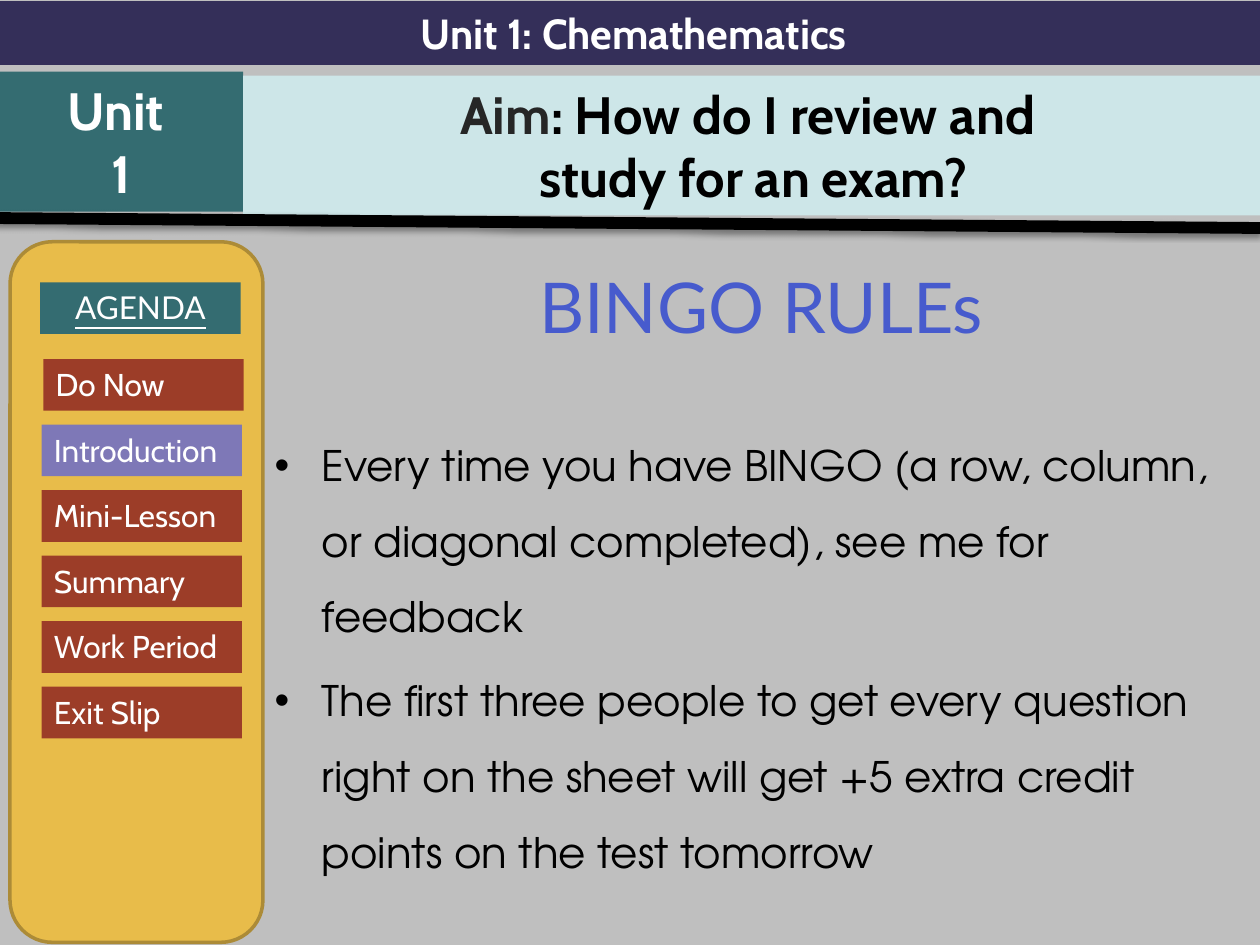
"""Build the bingo rules slide with its unit banners and agenda sidebar."""
from typing import NamedTuple

from lxml import etree
from pptx import Presentation
from pptx.dml.color import RGBColor
from pptx.enum.shapes import MSO_CONNECTOR, MSO_SHAPE
from pptx.enum.text import MSO_ANCHOR, PP_ALIGN
from pptx.oxml.ns import qn
from pptx.util import Pt

RECTANGLE, ROUNDED = MSO_SHAPE.RECTANGLE, MSO_SHAPE.ROUNDED_RECTANGLE
STRAIGHT, TOP = MSO_CONNECTOR.STRAIGHT, MSO_ANCHOR.TOP
CENTER, LEFT = PP_ALIGN.CENTER, PP_ALIGN.LEFT

GRAY = RGBColor(0xBF, 0xBF, 0xBF)
NAVY = RGBColor(0x34, 0x2F, 0x59)
TEAL = RGBColor(0x34, 0x6C, 0x71)
PALE = RGBColor(0xCD, 0xE6, 0xE8)
GOLD = RGBColor(0xE8, 0xBC, 0x4A)
BRONZE = RGBColor(0xAC, 0x8B, 0x37)
RUST = RGBColor(0x9C, 0x3D, 0x28)
VIOLET = RGBColor(0x7E, 0x78, 0xB7)
BLUE = RGBColor(0x47, 0x5B, 0xCD)
CHARCOAL = RGBColor(0x26, 0x26, 0x26)
BLACK = RGBColor(0, 0, 0)
WHITE = RGBColor(0xFF, 0xFF, 0xFF)

BANNER = {"name": "Cabin", "size": Pt(30), "bold": True}
HEADER = BANNER | {"size": Pt(24)}
ITEM = {"name": "Cabin", "size": Pt(18)}
AGENDA = {"name": "Lato", "size": Pt(18), "underline": True}
TITLE = {"name": "Lato", "size": Pt(40)}
RULE = {"name": "TeX Gyre Adventor", "size": Pt(24)}

ITEM_TOP, ITEM_STEP, ITEM_LEFT = 205.2, 37.44, 23.76
ITEM_WIDTH, ITEM_HEIGHT = 114.48, 29.5
BULLET_INDENT = 27
TITLE_GAP, RULE_GAP = 38.4, 4.8


class Phrase(NamedTuple):
    """Text in one colour."""
    text: str
    color: RGBColor = WHITE


class Panel(NamedTuple):
    """A filled rectangle with lines of phrases."""
    left: float
    top: float
    width: float
    height: float
    fill: RGBColor
    lines: list[list[Phrase]]
    font: dict
    align: PP_ALIGN = CENTER


BANNERS = [
    Panel(0, 0.72, 724.3, 36.4, NAVY,
          [[Phrase("Unit 1: Chemathematics")]], HEADER),
    Panel(0, 41, 139, 80, TEAL, [[Phrase("Unit ")], [Phrase("1")]], BANNER),
    Panel(139, 43.2, 583.2, 80, PALE,
          [[Phrase("Aim", CHARCOAL), Phrase(": How do I review and ", BLACK)],
           [Phrase("study for an exam?", BLACK)]], BANNER),
]
AGENDA_HEADING = Panel(23, 161.3, ITEM_WIDTH, ITEM_HEIGHT, TEAL,
                       [[Phrase("AGENDA")]], AGENDA)
AGENDA_ITEMS = ["Do Now", "Introduction", "Mini-Lesson", "Summary", "Work Period", "Exit Slip"]
CURRENT_ITEM = "Introduction"
RULES = [
    "Every time you have BINGO (a row, column, or diagonal completed), see me for feedback",
    "The first three people to get every question right on the sheet will get +5 extra credit "
    "points on the test tomorrow",
]


def add_phrase(paragraph, phrase: Phrase, font: dict) -> None:
    """Append a formatted run to a paragraph."""
    run = paragraph.add_run()
    run.text = phrase.text
    for attribute, value in font.items():
        setattr(run.font, attribute, value)
    run.font.color.rgb = phrase.color


def next_paragraph(frame, index: int):
    """Return the first paragraph or a new one."""
    return frame.add_paragraph() if index else frame.paragraphs[0]


def draw_panel(slide, panel: Panel) -> None:
    """Draw a flat rectangle with its text."""
    shape = slide.shapes.add_shape(RECTANGLE, *map(Pt, panel[:4]))
    shape.shadow.inherit = False
    shape.fill.solid()
    shape.fill.fore_color.rgb = panel.fill
    shape.line.fill.background()
    frame = shape.text_frame
    frame.word_wrap = True
    frame.vertical_anchor = TOP
    for index, phrases in enumerate(panel.lines):
        paragraph = next_paragraph(frame, index)
        paragraph.alignment = panel.align
        for phrase in phrases:
            add_phrase(paragraph, phrase, panel.font)


def draw_sidebar(slide) -> None:
    """Draw the gold sidebar, its heading and the agenda items."""
    sidebar = slide.shapes.add_shape(ROUNDED, Pt(5.76), Pt(138.2), Pt(144.5), Pt(400.3))
    sidebar.shadow.inherit = False
    sidebar.fill.solid()
    sidebar.fill.fore_color.rgb = GOLD
    sidebar.line.color.rgb = BRONZE
    sidebar.line.width = Pt(2)
    draw_panel(slide, AGENDA_HEADING)
    for index, label in enumerate(AGENDA_ITEMS):
        left = ITEM_LEFT if index else ITEM_LEFT + 1
        fill = VIOLET if label == CURRENT_ITEM else RUST
        draw_panel(slide, Panel(left, ITEM_TOP + index * ITEM_STEP, ITEM_WIDTH, ITEM_HEIGHT,
                                fill, [[Phrase(label)]], ITEM, LEFT))


def draw_divider(slide) -> None:
    """Draw the thick slanted line with a soft shadow."""
    divider = slide.shapes.add_connector(STRAIGHT, Pt(-3.6), Pt(124.6), Pt(720), Pt(130.3))
    divider.line.color.rgb = BLACK
    divider.line.width = Pt(6.75)
    effects = etree.SubElement(divider._element.spPr, qn("a:effectLst"))
    shadow = etree.SubElement(effects, qn("a:outerShdw"), blurRad=str(Pt(3.1)),
                              dist=str(Pt(1.6)), dir="5400000", rotWithShape="0")
    color = etree.SubElement(shadow, qn("a:srgbClr"), val=str(BLACK))
    etree.SubElement(color, qn("a:alpha"), val="38000")


def draw_rules(slide) -> None:
    """Write the title and the bulleted rules."""
    box = slide.shapes.add_textbox(Pt(149.8), Pt(146.9), Pt(570.2), Pt(393.1))
    frame = box.text_frame
    frame.word_wrap = True
    title = frame.paragraphs[0]
    title.alignment = CENTER
    add_phrase(title, Phrase("BINGO RULEs", BLUE), TITLE)
    for index, rule in enumerate(RULES):
        paragraph = frame.add_paragraph()
        paragraph.alignment = LEFT
        paragraph.line_spacing = 1.5
        paragraph.space_before = Pt(RULE_GAP if index else TITLE_GAP)
        properties = paragraph._p.get_or_add_pPr()
        properties.set("marL", str(Pt(BULLET_INDENT)))
        properties.set("indent", str(-Pt(BULLET_INDENT)))
        etree.SubElement(properties, qn("a:buFont"), typeface="Arial")
        etree.SubElement(properties, qn("a:buChar"), char="•")
        add_phrase(paragraph, Phrase(rule, BLACK), RULE)


def main() -> None:
    """Build and save the slide."""
    presentation = Presentation()
    presentation.slide_width, presentation.slide_height = Pt(720), Pt(540)
    slide = presentation.slides.add_slide(presentation.slide_layouts[6])
    slide.background.fill.solid()
    slide.background.fill.fore_color.rgb = GRAY
    draw_rules(slide)
    for banner in BANNERS:
        draw_panel(slide, banner)
    draw_divider(slide)
    draw_sidebar(slide)
    presentation.save("out.pptx")


if __name__ == "__main__":
    main()
